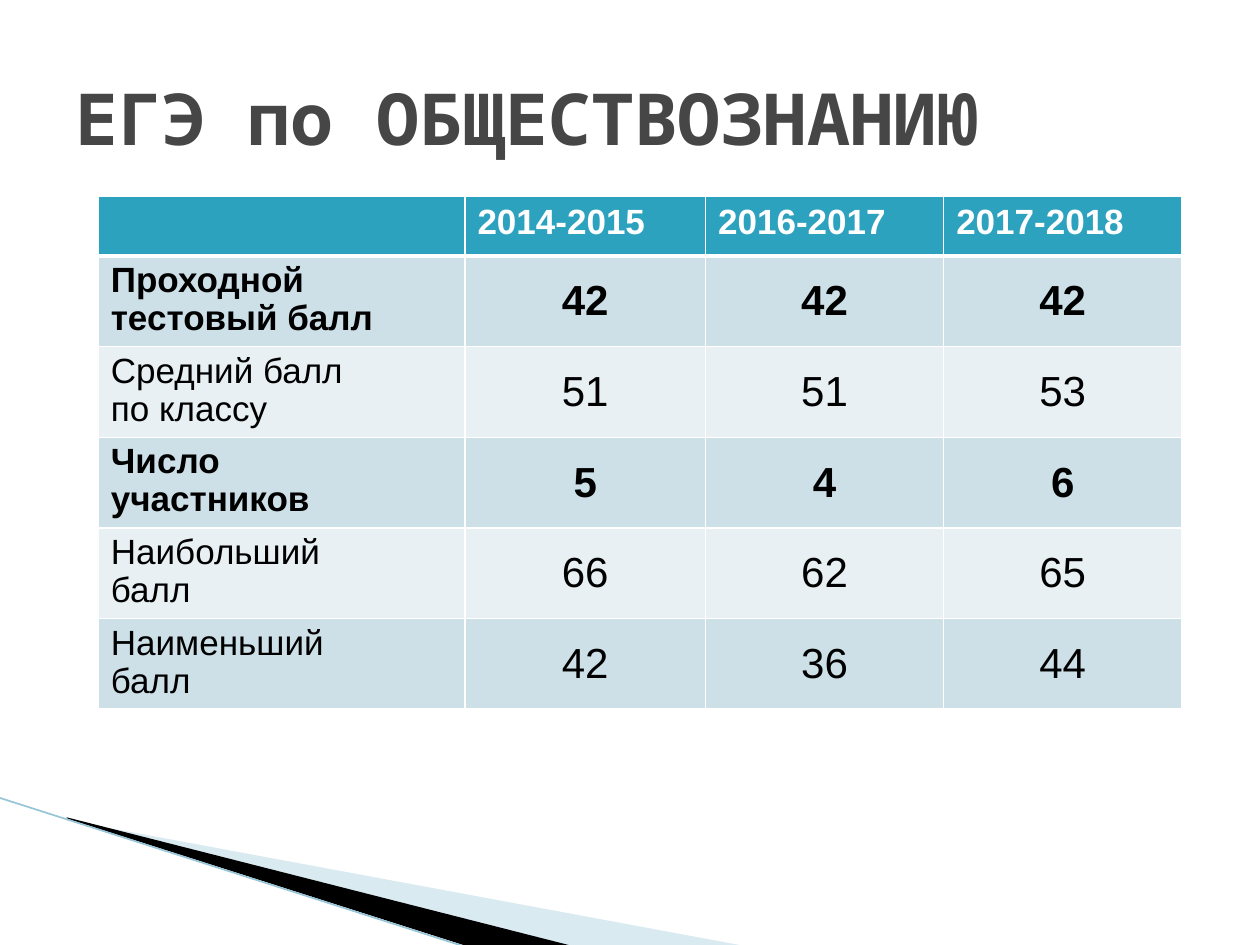
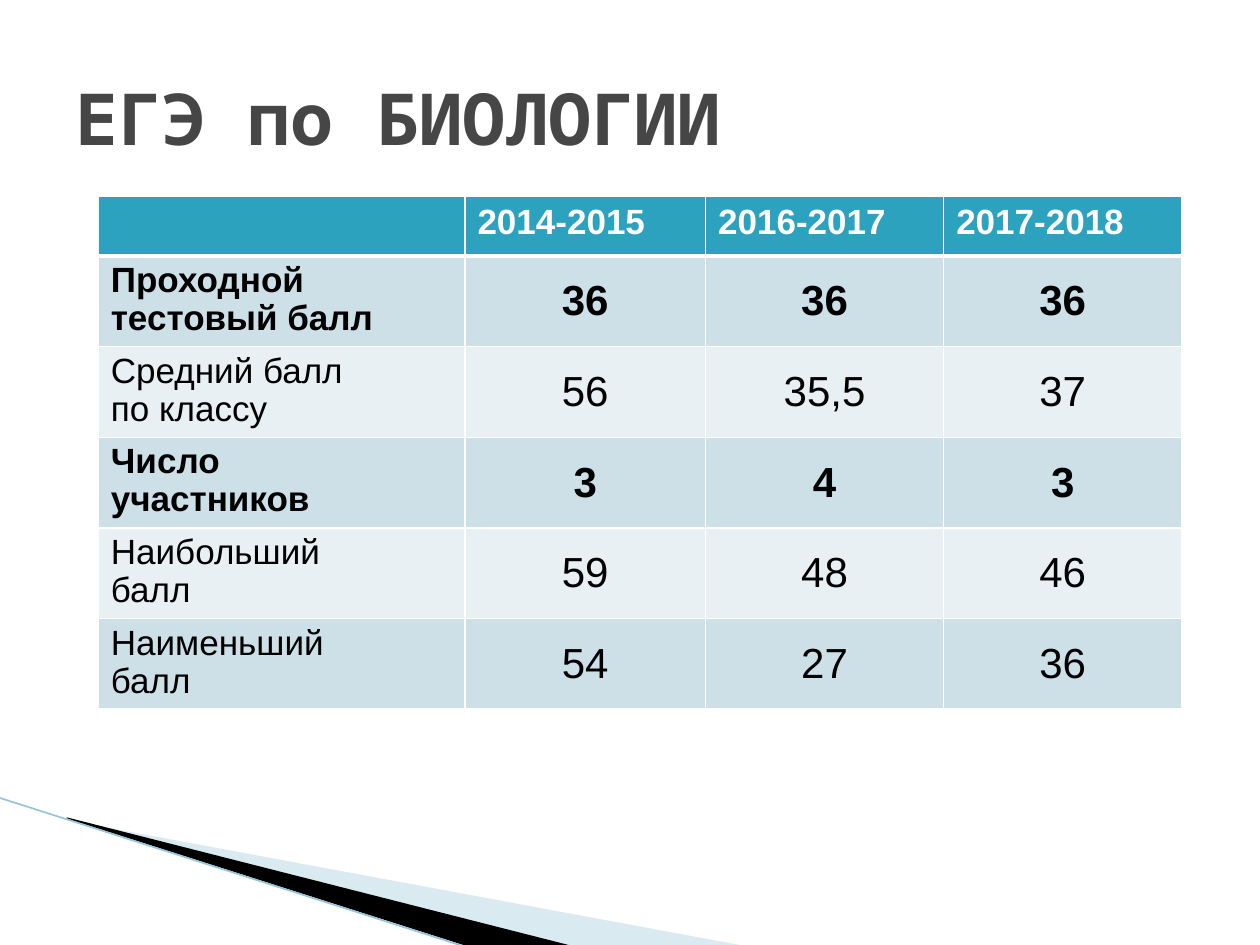
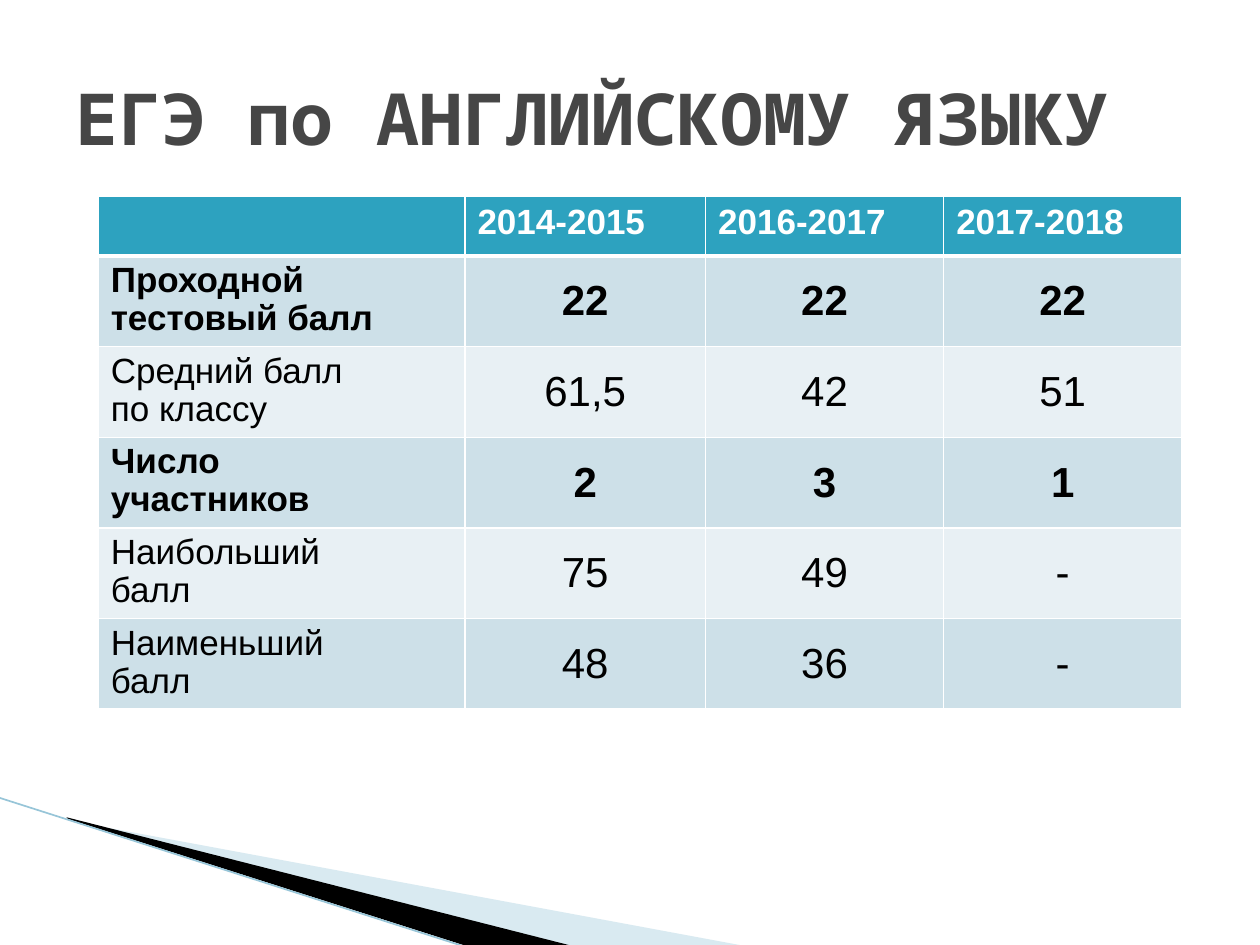
"""Build three slides of exam results, one table for each subject."""
from lxml import etree
from pptx import Presentation
from pptx.dml.color import RGBColor
from pptx.enum.shapes import MSO_CONNECTOR
from pptx.enum.text import MSO_ANCHOR, PP_ALIGN
from pptx.oxml.ns import qn
from pptx.util import Pt

LINE = MSO_CONNECTOR.STRAIGHT
MIDDLE, TOP = MSO_ANCHOR.MIDDLE, MSO_ANCHOR.TOP
CENTER, LEFT = PP_ALIGN.CENTER, PP_ALIGN.LEFT

WHITE = RGBColor(0xFF, 0xFF, 0xFF)
BLACK = RGBColor(0, 0, 0)
GREY = RGBColor(0x46, 0x46, 0x46)
TEAL = RGBColor(0x2D, 0xA2, 0xBF)
BANDS = RGBColor(0xCD, 0xE0, 0xE8), RGBColor(0xE8, 0xF0, 0xF4)
PALE = RGBColor(0xA0, 0xCB, 0xDC)
EDGE = RGBColor(0x97, 0xC5, 0xD8)

TITLE = {"name": "Noto Sans Mono", "size": Pt(41), "bold": True}
LABEL = {"name": "Arial", "size": Pt(20)}
VALUE = {"name": "Arial", "size": Pt(24)}

COLS = 209.52, 137.52, 136.08, 136.08
HEAD, ROW = 34, 51.8
YEARS = "2014-2015", "2016-2017", "2017-2018"
LABELS = (
    ("Проходной\nтестовый балл", True),
    ("Средний балл\nпо классу", False),
    ("Число\nучастников", True),
    ("Наибольший\nбалл", False),
    ("Наименьший\nбалл", False),
)
EXAMS = (
    ("ОБЩЕСТВОЗНАНИЮ",
     (("42", "42", "42"), ("51", "51", "53"), ("5", "4", "6"),
      ("66", "62", "65"), ("42", "36", "44"))),
    ("БИОЛОГИИ",
     (("36", "36", "36"), ("56", "35,5", "37"), ("3", "4", "3"),
      ("59", "48", "46"), ("54", "27", "36"))),
    ("АНГЛИЙСКОМУ ЯЗЫКУ",
     (("22", "22", "22"), ("61,5", "42", "51"), ("2", "3", "1"),
      ("75", "49", "-"), ("48", "36", "-"))),
)


def style(para, form, color):
    """Apply font values and a colour to a paragraph."""
    for key, val in form.items():
        setattr(para.font, key, val)
    para.font.color.rgb = color


def add_wedge(slide, points, color, alpha=100):
    """Draw a filled outline through the points."""
    build = slide.shapes.build_freeform(*points[0], scale=Pt(1))
    build.add_line_segments(points[1:])
    wedge = build.convert_to_shape()
    wedge.shadow.inherit = False
    wedge.line.fill.background()
    wedge.fill.solid()
    wedge.fill.fore_color.rgb = color
    if alpha < 100:
        tint = wedge.fill._xPr.find(".//" + qn("a:srgbClr"))
        etree.SubElement(tint, qn("a:alpha"), val=str(alpha * 1000))


def add_decor(slide):
    """Draw the corner wedges and their edge line."""
    add_wedge(slide, [(39.6, 468.72), (428.4, 540.72),
                      (328.32, 540.72), (39.6, 468)], PALE, 40)
    add_wedge(slide, [(38.16, 467.28), (329.04, 540.72),
                      (267.84, 541.44), (38.88, 468)], BLACK)
    edge = slide.shapes.add_connector(
        LINE, Pt(-0.72), Pt(455.76), Pt(267.12), Pt(541.44))
    edge.line.color.rgb = EDGE
    edge.line.width = Pt(0.95)
    etree.SubElement(edge._element.spPr, qn("a:effectLst"))


def add_title(slide, text):
    """Write the slide title."""
    box = slide.shapes.add_textbox(Pt(36), Pt(21.6), Pt(648), Pt(90))
    frame = box.text_frame
    frame.word_wrap = True
    frame.vertical_anchor = MIDDLE
    frame.text = text
    style(frame.paragraphs[0], TITLE, GREY)


def set_edges(cell, top, bottom):
    """Give a cell white borders."""
    props = cell._tc.get_or_add_tcPr()
    for side, width in zip("LRTB", (1, 1, top, bottom)):
        line = etree.SubElement(props, qn("a:ln" + side), w=str(Pt(width)))
        fill = etree.SubElement(line, qn("a:solidFill"))
        etree.SubElement(fill, qn("a:srgbClr"), val=str(WHITE))


def fill_cell(cell, text, form, color, back, center=False):
    """Write and colour one table cell."""
    cell.fill.solid()
    cell.fill.fore_color.rgb = back
    cell.vertical_anchor = MIDDLE if center else TOP
    cell.text = text
    for para in cell.text_frame.paragraphs:
        para.alignment = CENTER if center else LEFT
        if "\n" in text:
            para.line_spacing = 0.97
        style(para, form, color)


def add_scores(slide, scores):
    """Add the table of scores by year."""
    high = HEAD + ROW * len(LABELS)
    table = slide.shapes.add_table(
        len(LABELS) + 1, len(COLS), Pt(56.16), Pt(112.32),
        Pt(sum(COLS)), Pt(high)).table
    for col, width in zip(table.columns, COLS):
        col.width = Pt(width)
    for num, row in enumerate(table.rows):
        row.height = Pt(ROW if num else HEAD)
        for cell in row.cells:
            set_edges(cell, 3 if num == 1 else 1, 1 if num else 3)
    for col, year in enumerate(("", *YEARS)):
        fill_cell(table.cell(0, col), year, LABEL | {"bold": True},
                  WHITE, TEAL)
    for num, ((label, bold), vals) in enumerate(zip(LABELS, scores)):
        back = BANDS[num % 2]
        weight = {"bold": bold}
        fill_cell(table.cell(num + 1, 0), label, LABEL | weight, BLACK, back)
        for col, val in enumerate(vals, 1):
            fill_cell(table.cell(num + 1, col), val, VALUE | weight,
                      BLACK, back, True)


def main():
    """Build and save the deck."""
    prs = Presentation()
    prs.slide_width, prs.slide_height = Pt(720), Pt(540)
    for topic, scores in EXAMS:
        slide = prs.slides.add_slide(prs.slide_layouts[6])
        add_decor(slide)
        add_scores(slide, scores)
        add_title(slide, "ЕГЭ по " + topic)
    prs.save("out.pptx")


if __name__ == "__main__":
    main()
